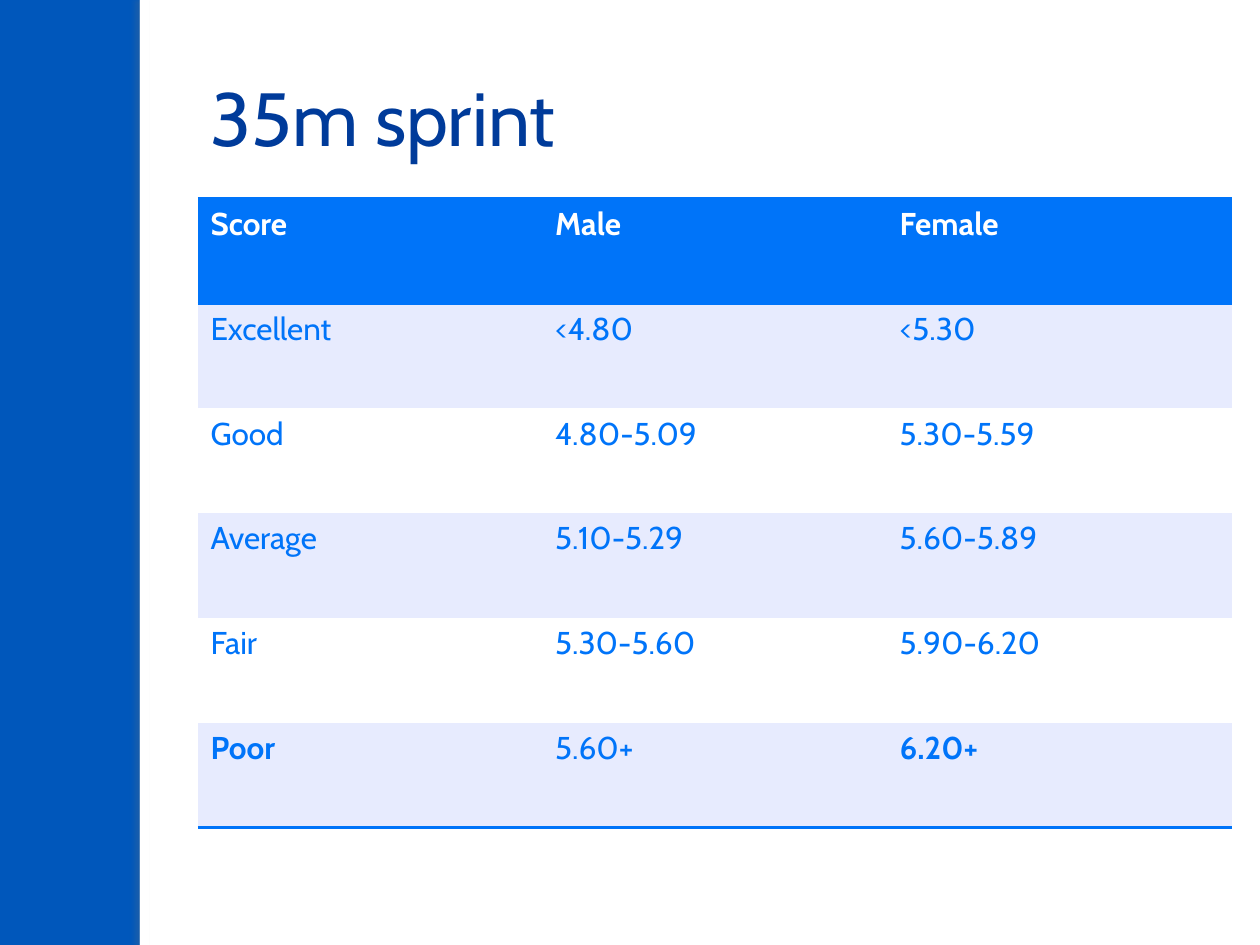
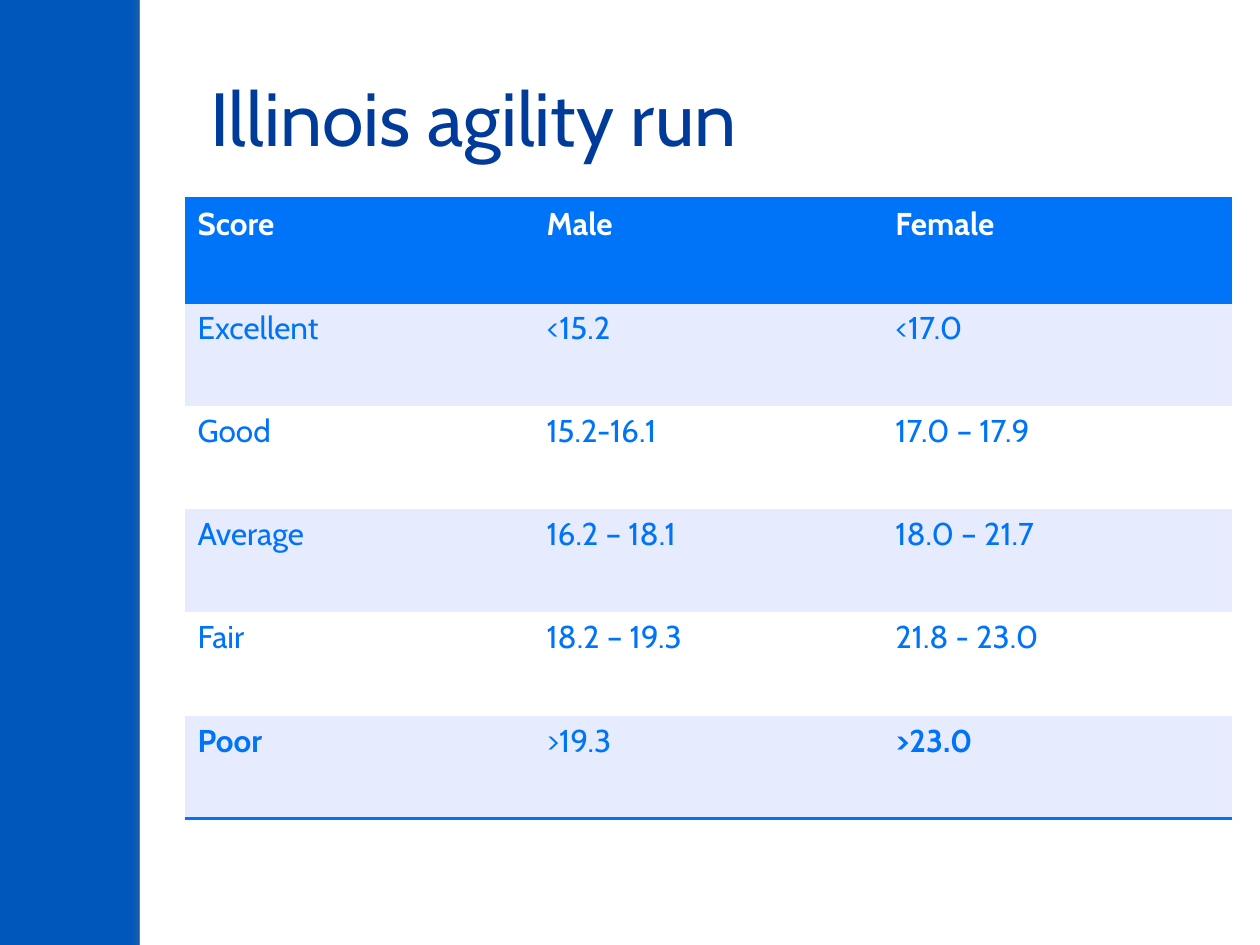
from dataclasses import dataclass

from lxml.etree import SubElement
from pptx import Presentation
from pptx.dml.color import RGBColor
from pptx.enum.shapes import MSO_SHAPE
from pptx.enum.text import MSO_ANCHOR
from pptx.oxml import parse_xml
from pptx.oxml.ns import nsdecls, qn
from pptx.util import Cm, Pt


@dataclass(frozen=True)
class Theme:
    font: str = "Cabin"
    band: str = "0057BB"
    panel: str = "FFFFFF"
    title: str = "003B9A"
    accent: str = "0074F9"
    stripe: str = "E7EBFE"
    shadow: str = "61737F"
    title_size: int = 43
    table_size: int = 18


theme = Theme()
NO_STYLE_NO_GRID = "{2D5ABB26-0587-4C30-8999-92F81FD0307C}"
PANEL_LEFT = Cm(2.82)
TABLE_TOP = Cm(4.01)
TABLE_RIGHT = Cm(24.83)

# Title, table left, table height, and the rows below the shared header
header = ("Score", "Male", "Female")
score_tables = [
    ("35m sprint", Cm(3.99), Cm(12.67), [
        ("Excellent", "<4.80", "<5.30"),
        ("Good", "4.80-5.09", "5.30-5.59"),
        ("Average", "5.10-5.29", "5.60-5.89"),
        ("Fair", "5.30-5.60", "5.90-6.20"),
        ("Poor", "5.60+", "6.20+"),
    ]),
    ("Illinois agility run", Cm(3.73), Cm(12.5), [
        ("Excellent", "<15.2", "<17.0"),
        ("Good", "15.2-16.1", "17.0 – 17.9"),
        ("Average", "16.2 – 18.1", "18.0 – 21.7"),
        ("Fair", "18.2 – 19.3", "21.8 - 23.0"),
        ("Poor", ">19.3", ">23.0"),
    ]),
]


def style_text(paragraph, size, color, bold=False):
    paragraph.font.name = theme.font
    paragraph.font.size = Pt(size)
    paragraph.font.bold = bold
    paragraph.font.color.rgb = RGBColor.from_string(color)


def add_border(cell, side):
    line = SubElement(cell._tc.get_or_add_tcPr(), qn(f"a:ln{side}"), w=str(Pt(2)))
    fill = SubElement(line, qn("a:solidFill"))
    SubElement(fill, qn("a:srgbClr"), val=theme.accent)


presentation = Presentation()
presentation.slide_width = Cm(25.4)
presentation.slide_height = Cm(19.05)

# Blue background shared by all slides
background = presentation.slide_master.background.fill
background.solid()
background.fore_color.rgb = RGBColor.from_string(theme.band)

for title, table_left, table_height, scores in score_tables:
    slide = presentation.slides.add_slide(presentation.slide_layouts[6])

    # White panel, with a narrow edge that casts a shadow on the blue band
    for width in (presentation.slide_width - PANEL_LEFT, Cm(0.2)):
        panel = slide.shapes.add_shape(
            MSO_SHAPE.RECTANGLE, PANEL_LEFT, 0, width, presentation.slide_height)
        panel.shadow.inherit = False
        panel.fill.solid()
        panel.fill.fore_color.rgb = RGBColor.from_string(theme.panel)
        panel.line.fill.background()
    effects = panel._element.spPr.find(qn("a:effectLst"))
    effects.append(parse_xml(
        f'<a:outerShdw {nsdecls("a")} blurRad="{Pt(3)}" dist="{Pt(3)}" dir="10800000" '
        f'algn="ctr" rotWithShape="0"><a:srgbClr val="{theme.shadow}">'
        '<a:alpha val="25000"/></a:srgbClr></a:outerShdw>'))

    # Title
    title_box = slide.shapes.add_textbox(Cm(3.99), Cm(0.76), Cm(20.83), Cm(3.18))
    title_box.text_frame.word_wrap = True
    title_box.text_frame.vertical_anchor = MSO_ANCHOR.MIDDLE
    paragraph = title_box.text_frame.paragraphs[0]
    paragraph.text = title
    style_text(paragraph, theme.title_size, theme.title)

    # Score table
    rows = [header, *scores]
    last_row = len(rows) - 1
    table = slide.shapes.add_table(
        len(rows), len(header), table_left, TABLE_TOP,
        TABLE_RIGHT - table_left, table_height).table
    table._tbl.tblPr.find(qn("a:tableStyleId")).text = NO_STYLE_NO_GRID
    for row_index, row in enumerate(rows):
        is_header = row_index == 0
        if is_header:
            cell_fill, text_color = theme.accent, theme.panel
        else:
            cell_fill = theme.stripe if row_index % 2 else theme.panel
            text_color = theme.accent
        for column_index, text in enumerate(row):
            cell = table.cell(row_index, column_index)
            # Borders go before the fill in the cell properties
            if is_header:
                add_border(cell, "T")
            if row_index in (0, last_row):
                add_border(cell, "B")
            cell.fill.solid()
            cell.fill.fore_color.rgb = RGBColor.from_string(cell_fill)
            # The last row is bold in its outer columns only
            bold = is_header or (row_index == last_row and column_index != 1)
            paragraph = cell.text_frame.paragraphs[0]
            paragraph.text = text
            style_text(paragraph, theme.table_size, text_color, bold)

presentation.save("out.pptx")
